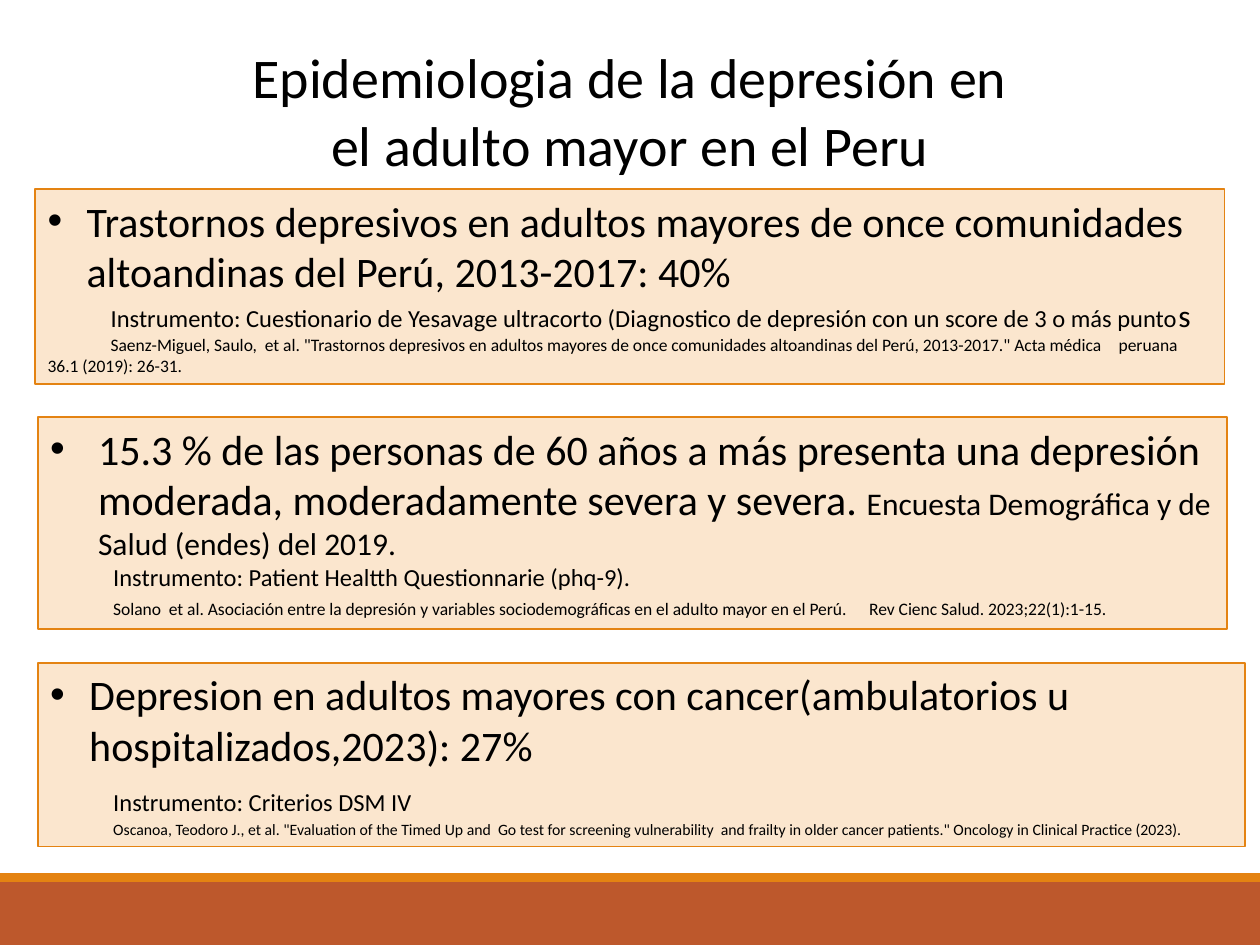
"""Build a slide on the epidemiology of depression in older adults in Peru."""
import dataclasses

import lxml.etree
import pptx
import pptx.dml.color
import pptx.enum.shapes
import pptx.enum.text
import pptx.oxml.ns
import pptx.util


@dataclasses.dataclass(frozen=True)
class Theme:
    font: str = "Calibri"
    text: str = "000000"
    panel: str = "FBE6CE"
    accent: str = "E48312"
    footer: str = "BD582C"
    title: int = 32
    finding: int = 24
    survey: int = 18
    instrument: int = 14
    citation: int = 10
    small: int = 9


class Deck:
    columns, rows = 100, 75
    tab = 0.5

    def __init__(self, theme):
        self.theme = theme
        self.prs = pptx.Presentation()
        self.prs.slide_width = pptx.util.Inches(10)
        self.prs.slide_height = pptx.util.Inches(7.5)
        self.s = self.prs.slides.add_slide(self.prs.slide_layouts[5])

    def box(self, x, y, w, h):
        dx = self.prs.slide_width / self.columns
        dy = self.prs.slide_height / self.rows
        return [round(v) for v in (x * dx, y * dy, w * dx, h * dy)]

    def color(self, value):
        return pptx.dml.color.RGBColor.from_string(value)

    def style(self, r, size):
        r.font.name = self.theme.font
        r.font.size = pptx.util.Pt(size)
        r.font.color.rgb = self.color(self.theme.text)

    def title(self, text, *area):
        sp = self.s.shapes.title
        sp.left, sp.top, sp.width, sp.height = self.box(*area)
        tf = sp.text_frame
        tf.text = text
        tf.word_wrap = True
        tf.auto_size = pptx.enum.text.MSO_AUTO_SIZE.SHAPE_TO_FIT_TEXT
        tf.vertical_anchor = pptx.enum.text.MSO_ANCHOR.TOP
        tf.paragraphs[0].alignment = pptx.enum.text.PP_ALIGN.CENTER
        self.style(tf.paragraphs[0].runs[0], self.theme.title)

    def rect(self, fill, *area, line=None):
        sp = self.s.shapes.add_shape(pptx.enum.shapes.MSO_SHAPE.RECTANGLE, *self.box(*area))
        sp.shadow.inherit = False
        sp.fill.solid()
        sp.fill.fore_color.rgb = self.color(fill)
        if line:
            sp.line.color.rgb = self.color(line)
            sp.line.width = pptx.util.Pt(1)
        else:
            sp.line.fill.background()
        return sp

    def indent(self, p, left, first=0, bullet=False):
        pPr = p._p.get_or_add_pPr()
        pPr.set("marL", str(pptx.util.Inches(left)))
        pPr.set("indent", str(pptx.util.Inches(first)))
        qn = pptx.oxml.ns.qn
        if bullet:
            lxml.etree.SubElement(pPr, qn("a:buFont")).set("typeface", "Arial")
            lxml.etree.SubElement(pPr, qn("a:buChar")).set("char", "•")
        else:
            tabs = lxml.etree.SubElement(pPr, qn("a:tabLst"))
            for i in range(1, 19):
                stop = lxml.etree.SubElement(tabs, qn("a:tab"))
                stop.set("pos", str(pptx.util.Inches(i * self.tab)))
                stop.set("algn", "l")

    def panel(self, area, hang, paragraphs, left=0):
        sp = self.rect(self.theme.panel, *area, line=self.theme.accent)
        tf = sp.text_frame
        tf.word_wrap = True
        tf.auto_size = pptx.enum.text.MSO_AUTO_SIZE.SHAPE_TO_FIT_TEXT
        tf.vertical_anchor = pptx.enum.text.MSO_ANCHOR.TOP
        for i, runs in enumerate(paragraphs):
            p = tf.paragraphs[0] if i == 0 else tf.add_paragraph()
            p.alignment = pptx.enum.text.PP_ALIGN.LEFT
            if i == 0:
                self.indent(p, hang, -hang, bullet=True)
            else:
                self.indent(p, left if i == 1 else 0)
            for text, size in runs:
                r = p.add_run()
                r.text = text
                self.style(r, size)


def main():
    t = Theme()
    deck = Deck(t)
    deck.rect(t.footer, 0, 70, 100, 5)
    deck.rect(t.accent, 0, 69.3, 100, 0.7)
    deck.title("Epidemiologia de la depresión en el adulto mayor en el Peru", 18.1, 2.9, 63.8, 11.8)
    deck.panel((2.8, 15, 94.4, 15.5), 0.31, [
        [("Trastornos depresivos en adultos mayores de once comunidades altoandinas "
          "del Perú, 2013-2017: 40%", t.finding)],
        [("Instrumento: Cuestionario de Yesavage ultracorto (Diagnostico de depresión "
          "con un score de 3 o más punto", t.instrument), ("s", t.survey)],
        [("\tSaenz-Miguel, Saulo,  et al. \"Trastornos depresivos en adultos mayores de once "
          "comunidades altoandinas del Perú, 2013-2017.\" Acta médica \tperuana \t"
          "36.1 (2019): 26-31.", t.citation)],
    ], left=deck.tab)
    deck.panel((3, 33.1, 94.4, 16.8), 0.38, [
        [("15.3 % de las personas de 60 años a más presenta una depresión moderada, "
          "moderadamente severa y severa. ", t.finding),
         ("Encuesta Demográfica y de Salud (endes) del 2019.", t.survey)],
        [("\tInstrumento: Patient Healtth Questionnarie (phq-9).", t.instrument)],
        [("\t", t.instrument),
         ("Solano  et al. Asociación entre la depresión y variables sociodemográficas en el "
          "adulto mayor en el Perú. \tRev Cienc Salud. 2023;22(1):1-15.", t.citation)],
    ])
    deck.panel((3, 52.6, 95.8, 14.6), 0.31, [
        [("Depresion en adultos mayores con cancer(ambulatorios u "
          "hospitalizados,2023): 27%", t.finding)],
        [("\t", t.finding), ("Instrumento: Criterios DSM IV", t.instrument)],
        [("\tOscanoa, Teodoro J., et al. \"Evaluation of the Timed Up and  Go test for "
          "screening vulnerability  and frailty in older cancer patients.\" "
          "Oncology in Clinical Practice (2023).", t.small)],
    ])
    deck.prs.save("out.pptx")


if __name__ == "__main__":
    main()
